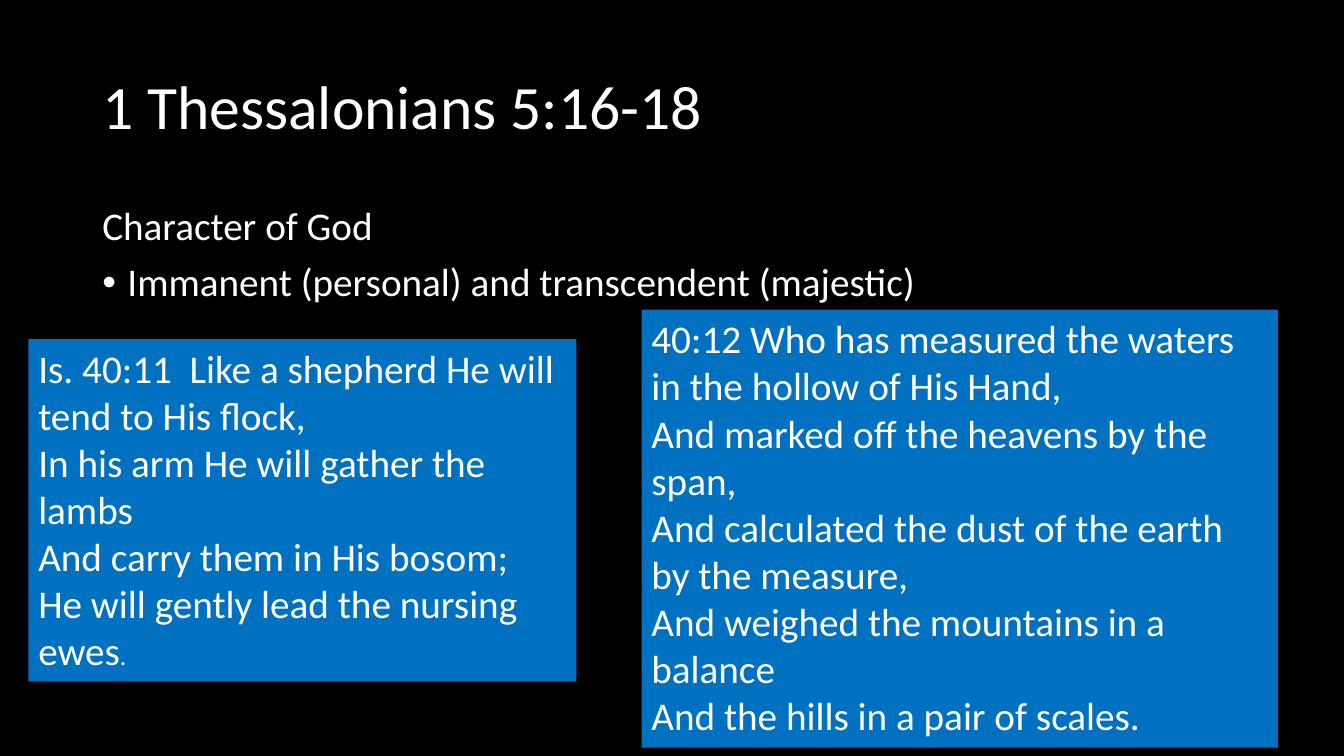
from dataclasses import dataclass

from lxml.etree import SubElement
from pptx import Presentation
from pptx.dml.color import RGBColor
from pptx.enum.shapes import MSO_SHAPE as Shape
from pptx.enum.text import MSO_ANCHOR as Anchor, MSO_AUTO_SIZE as AutoSize, PP_ALIGN as Align
from pptx.oxml.ns import qn
from pptx.util import Pt

EMU_PER_PX = 9525


@dataclass(frozen=True)
class Theme:
    font: str = "Calibri"
    background: RGBColor = RGBColor(0x00, 0x00, 0x00)
    text: RGBColor = RGBColor(0xFF, 0xFF, 0xFF)
    panel: RGBColor = RGBColor(0x00, 0x70, 0xC0)
    title_size: int = 44
    body_size: int = 28
    small_size: int = 18


def px(*lengths):
    return [length * EMU_PER_PX for length in lengths]


class VerseSlide:
    def __init__(self, deck, theme):
        self.theme = theme
        self.slide = deck.slides.add_slide(deck.slide_layouts[6])
        fill = self.slide.background.fill
        fill.solid()
        fill.fore_color.rgb = theme.background

    def style(self, paragraph, size):
        paragraph.alignment = Align.LEFT
        for run in paragraph.runs:
            run.font.name = self.theme.font
            run.font.size = Pt(size)
            run.font.color.rgb = self.theme.text

    def text(self, box, lines, size, anchor=Anchor.TOP, space_before=0):
        frame = self.slide.shapes.add_textbox(*px(*box)).text_frame
        frame.word_wrap = True
        frame.vertical_anchor = anchor
        frame.text = "\n".join(lines)
        for paragraph in frame.paragraphs:
            paragraph.line_spacing = 0.9
            paragraph.space_before = Pt(space_before)
            self.style(paragraph, size)
        return frame

    def bullet(self, paragraph, indent):
        [hanging] = px(indent)
        properties = paragraph._p.get_or_add_pPr()
        properties.set("marL", str(hanging))
        properties.set("indent", str(-hanging))
        SubElement(properties, qn("a:buFont"), typeface="Arial")
        SubElement(properties, qn("a:buChar"), char="•")

    def passage(self, box, verses):
        panel = self.slide.shapes.add_shape(Shape.RECTANGLE, *px(*box))
        panel.shadow.inherit = False
        panel.fill.solid()
        panel.fill.fore_color.rgb = self.theme.panel
        panel.line.fill.background()
        frame = panel.text_frame
        frame.word_wrap = True
        frame.auto_size = AutoSize.SHAPE_TO_FIT_TEXT
        frame.vertical_anchor = Anchor.TOP
        frame.text = "\n".join(verses)
        for paragraph in frame.paragraphs:
            self.style(paragraph, self.theme.body_size)
        return frame

    def small_ending(self, paragraph, ending):
        run = paragraph.add_run()
        run.text = ending
        run.font.name = self.theme.font
        run.font.size = Pt(self.theme.small_size)
        run.font.color.rgb = self.theme.text


def main():
    deck = Presentation()
    deck.slide_width, deck.slide_height = px(1280, 720)
    theme = Theme()
    page = VerseSlide(deck, theme)

    page.text((88, 35, 1104, 139), ["1 Thessalonians 5:16-18"],
              theme.title_size, anchor=Anchor.MIDDLE)
    character = page.text(
        (88, 192, 1104, 457),
        ["Character of God", "Immanent (personal) and transcendent (majestic)"],
        theme.body_size, space_before=10)
    page.bullet(character.paragraphs[1], 24)

    shepherd = page.passage((27, 323, 522, 326), [
        "Is. 40:11  Like a shepherd He will tend to His flock,",
        "In his arm He will gather the lambs",
        "And carry them in His bosom;",
        "He will gently lead the nursing ewes",
    ])
    page.small_ending(shepherd.paragraphs[-1], ".")

    page.passage((611, 295, 606, 417), [
        "40:12 Who has measured the waters in the hollow of His Hand,",
        "And marked off the heavens by the span,",
        "And calculated the dust of the earth by the measure,",
        "And weighed the mountains in a balance",
        "And the hills in a pair of scales.",
    ])

    deck.save("out.pptx")


if __name__ == "__main__":
    main()
